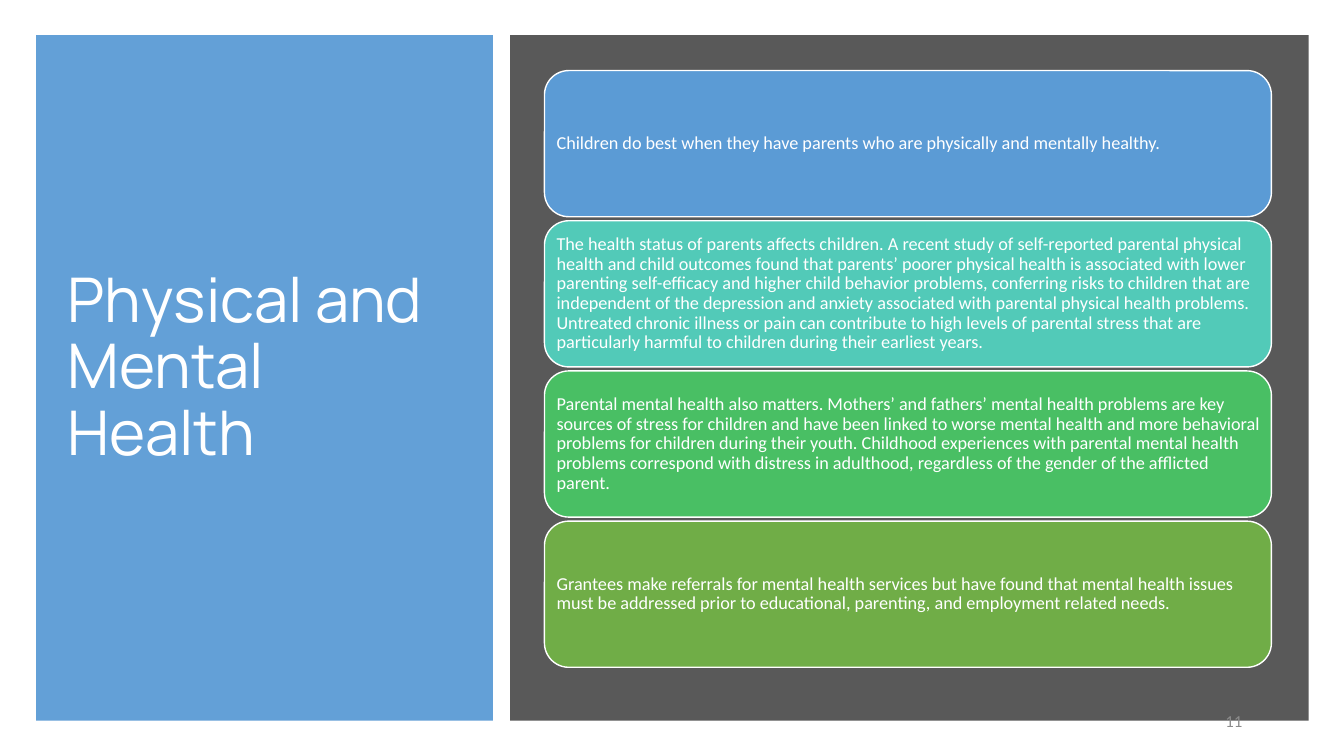
"""Build the slide on the physical and mental health of parents."""
from lxml.etree import SubElement
from pptx import Presentation
from pptx.dml.color import RGBColor as RGB
from pptx.enum.shapes import MSO_SHAPE as Kind
from pptx.enum.text import MSO_ANCHOR as Anchor, MSO_AUTO_SIZE as Fit, PP_ALIGN as Align
from pptx.oxml.ns import qn
from pptx.util import Inches, Pt

HUES = {
    "white": "FFFFFF",
    "blue": "5B9BD5",
    "teal": "52CAB8",
    "green": "49BF64",
    "olive": "70AD47",
    "slate": "595959",
    "grey": "8C8C8C",
}
CARDS = [
    ("blue", "Children do best when they have parents who are physically and mentally healthy."),
    ("teal", "The health status of parents affects children. A recent study of self-reported "
     "parental physical health and child outcomes found that parents’ poorer physical health "
     "is associated with lower parenting self-efficacy and higher child behavior problems, "
     "conferring risks to children that are independent of the depression and anxiety "
     "associated with parental physical health problems. Untreated chronic illness or pain "
     "can contribute to high levels of parental stress that are particularly harmful to "
     "children during their earliest years."),
    ("green", "Parental mental health also matters. Mothers’ and fathers’ mental health "
     "problems are key sources of stress for children and have been linked to worse mental "
     "health and more behavioral problems for children during their youth. Childhood "
     "experiences with parental mental health problems correspond with distress in "
     "adulthood, regardless of the gender of the afflicted parent."),
    ("olive", "Grantees make referrals for mental health services but have found that mental "
     "health issues must be addressed prior to educational, parenting, and employment "
     "related needs."),
]
TOP, TALL = 0.35, 6.8
CARD, STEP = 1.45, 1.49


def block(kind, box, hue):
    shape = slide.shapes.add_shape(kind, *map(Inches, box))
    shape.shadow.inherit = False
    shape.fill.solid()
    shape.fill.fore_color.rgb = RGB.from_string(HUES[hue])
    shape.line.fill.background()
    return shape


def write(shape, text, size, hue="white", face="Calibri", align=Align.LEFT, space=0.9, pad=None):
    frame = shape.text_frame
    frame.text = text
    look = {"word_wrap": True, "auto_size": Fit.NONE, "vertical_anchor": Anchor.MIDDLE}
    if pad is not None:
        look |= {f"margin_{side}": Inches(pad) for side in ("left", "top", "right", "bottom")}
    para = frame.paragraphs[0]
    font = para.runs[0].font
    font.color.rgb = RGB.from_string(HUES[hue])
    for part, values in (
        (frame, look),
        (para, {"alignment": align, "line_spacing": space}),
        (font, {"name": face, "size": Pt(size)}),
    ):
        for name, value in values.items():
            setattr(part, name, value)


deck = Presentation()
deck.slide_width, deck.slide_height = Inches(13.33), Inches(7.5)
slide = deck.slides.add_slide(deck.slide_layouts[5])

panel = block(Kind.RECTANGLE, (0.36, TOP, 4.53, TALL), "blue")
tint = panel.element.spPr.find(".//" + qn("a:srgbClr"))
SubElement(tint, qn("a:alpha"), val="95000")

title = slide.shapes.title
for name, value in {"left": 0.57, "top": 0.64, "width": 4.07, "height": 6.04}.items():
    setattr(title, name, Inches(value))
write(title, "Physical and Mental Health", 44, face="Manrope")
panel.element.addnext(title.element)

block(Kind.RECTANGLE, (5.06, TOP, 7.92, TALL), "slate")

for row, (hue, text) in enumerate(CARDS):
    card = block(Kind.ROUNDED_RECTANGLE, (5.4, 0.7 + row * STEP, 7.21, CARD), hue)
    card.line.color.rgb = RGB.from_string(HUES["white"])
    card.line.width = Pt(1)
    write(card, text, 13, pad=0.05)

number = slide.shapes.add_textbox(*map(Inches, (9.42, 6.95, 3, 0.4)))
write(number, "11", 12, "grey", align=Align.RIGHT, space=1.0)

deck.save("out.pptx")
